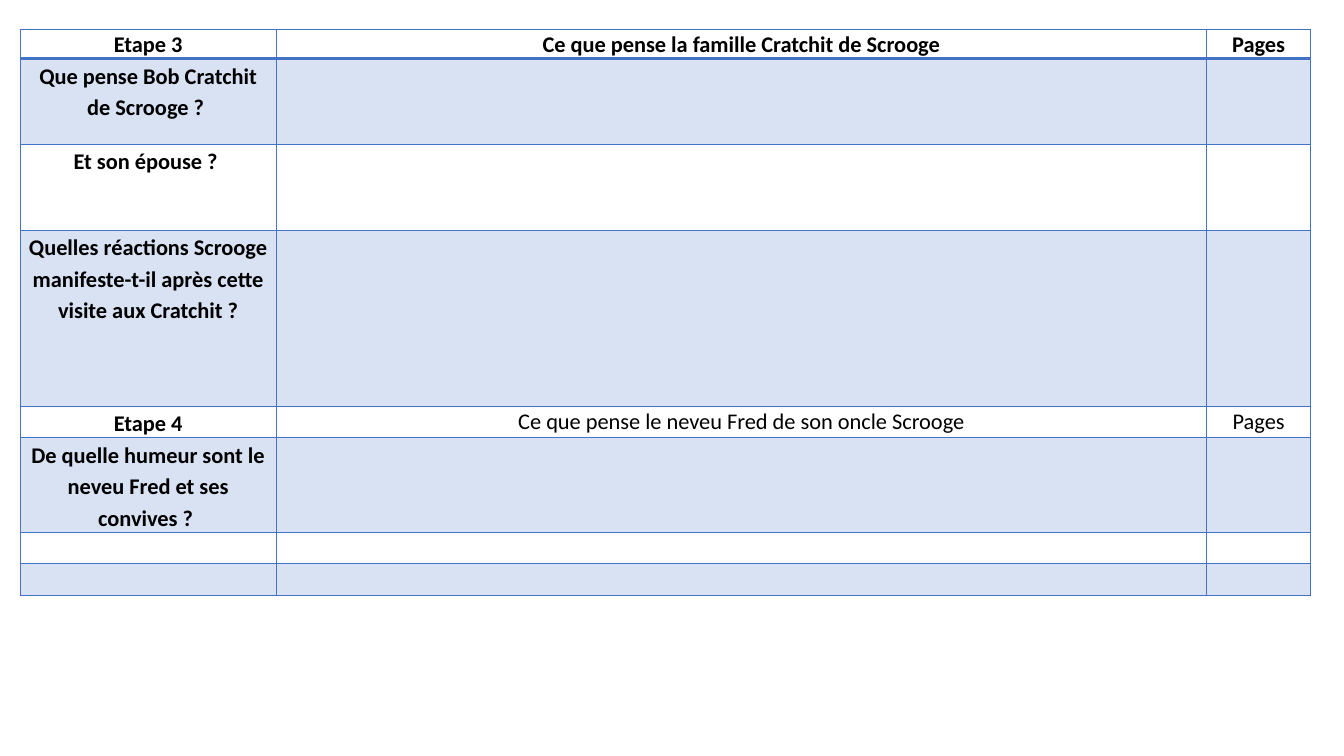
from lxml import etree
from pptx import Presentation
from pptx.dml.color import RGBColor
from pptx.enum.text import PP_ALIGN
from pptx.oxml.ns import qn
from pptx.util import Inches, Pt

CENTER = PP_ALIGN.CENTER
COLORS = {"accent": "4472C4", "text": "000000"}
BAND_ALPHA = 20  # percent

# Sizes in percent of the slide's width and height
TABLE_LEFT, TABLE_TOP = 1.5, 3.87
COLUMN_WIDTHS = [19.05, 69.24, 7.73]
LINE = 4.17  # one line of text
ROW_HEIGHTS = [3.87, 11.37, 11.37, 23.25, LINE, 3 * LINE, LINE, LINE]

STEPS = [
    ["Etape 3", "Ce que pense la famille Cratchit de Scrooge", "Pages"],
    ["Que pense Bob Cratchit de Scrooge ? "],
    ["Et son épouse ? "],
    ["Quelles réactions Scrooge manifeste-t-il après cette visite aux Cratchit ?"],
    ["Etape 4", "Ce que pense le neveu Fred de son oncle Scrooge", "Pages"],
    ["De quelle humeur sont le neveu Fred et ses convives ? "],
    [],
    [],
]


class Worksheet:
    """Holds the style and the current slide."""

    font, size = "Calibri", Pt(16)
    side_margin = Inches(0.07)

    def __init__(self, presentation):
        self.width = presentation.slide_width
        self.height = presentation.slide_height
        self.slide = presentation.slides.add_slide(presentation.slide_layouts[6])

    def across(self, percent):
        return int(self.width * percent / 100)

    def down(self, percent):
        return int(self.height * percent / 100)

    def table(self, left, top, widths, heights):
        table = self.slide.shapes.add_table(
            len(heights), len(widths), self.across(left), self.down(top),
            self.across(sum(widths)), self.down(sum(heights))).table
        table.first_row = table.horz_banding = False
        for column, width in zip(table.columns, widths):
            column.width = self.across(width)
        for row, height in zip(table.rows, heights):
            row.height = self.down(height)
        return table

    def borders(self, cell, **widths):
        properties = cell._tc.get_or_add_tcPr()
        for side in "LRTB":
            line = etree.SubElement(properties, qn(f"a:ln{side}"),
                                    w=str(Pt(widths.get(side, 1))))
            fill = etree.SubElement(line, qn("a:solidFill"))
            etree.SubElement(fill, qn("a:srgbClr"), val=COLORS["accent"])

    def band(self, cell, shaded):
        if not shaded:
            cell.fill.background()
            return
        cell.fill.solid()
        cell.fill.fore_color.rgb = RGBColor.from_string(COLORS["accent"])
        color = cell._tc.tcPr.find(qn("a:solidFill")).find(qn("a:srgbClr"))
        etree.SubElement(color, qn("a:alpha"), val=str(BAND_ALPHA * 1000))

    def text(self, cell, wording, bold, spacing):
        cell.margin_left = cell.margin_right = self.side_margin
        cell.margin_top = cell.margin_bottom = 0
        if not wording:
            return
        cell.text_frame.text = wording
        paragraph = cell.text_frame.paragraphs[0]
        paragraph.alignment = CENTER
        paragraph.line_spacing = spacing
        font = paragraph.runs[0].font
        font.name, font.size, font.bold = self.font, self.size, bold
        font.color.rgb = RGBColor.from_string(COLORS["text"])


def main():
    presentation = Presentation()
    presentation.slide_width = Inches(13.33)
    presentation.slide_height = Inches(7.5)
    worksheet = Worksheet(presentation)

    # Reading table: questions, answers, page numbers
    questions = worksheet.table(TABLE_LEFT, TABLE_TOP, COLUMN_WIDTHS, ROW_HEIGHTS)
    for r, step in enumerate(STEPS):
        for c in range(len(COLUMN_WIDTHS)):
            cell = questions.cell(r, c)
            # A thicker rule runs under the first heading
            worksheet.borders(cell, B=2 if r == 0 else 1, T=2 if r == 1 else 1)
            worksheet.band(cell, shaded=r % 2 == 1)
            worksheet.text(cell, step[c] if c < len(step) else "",
                           bold=r == 0 or c == 0,
                           spacing=1.07 if r == 0 or c > 0 else 1.15)

    presentation.save("out.pptx")


if __name__ == "__main__":
    main()
